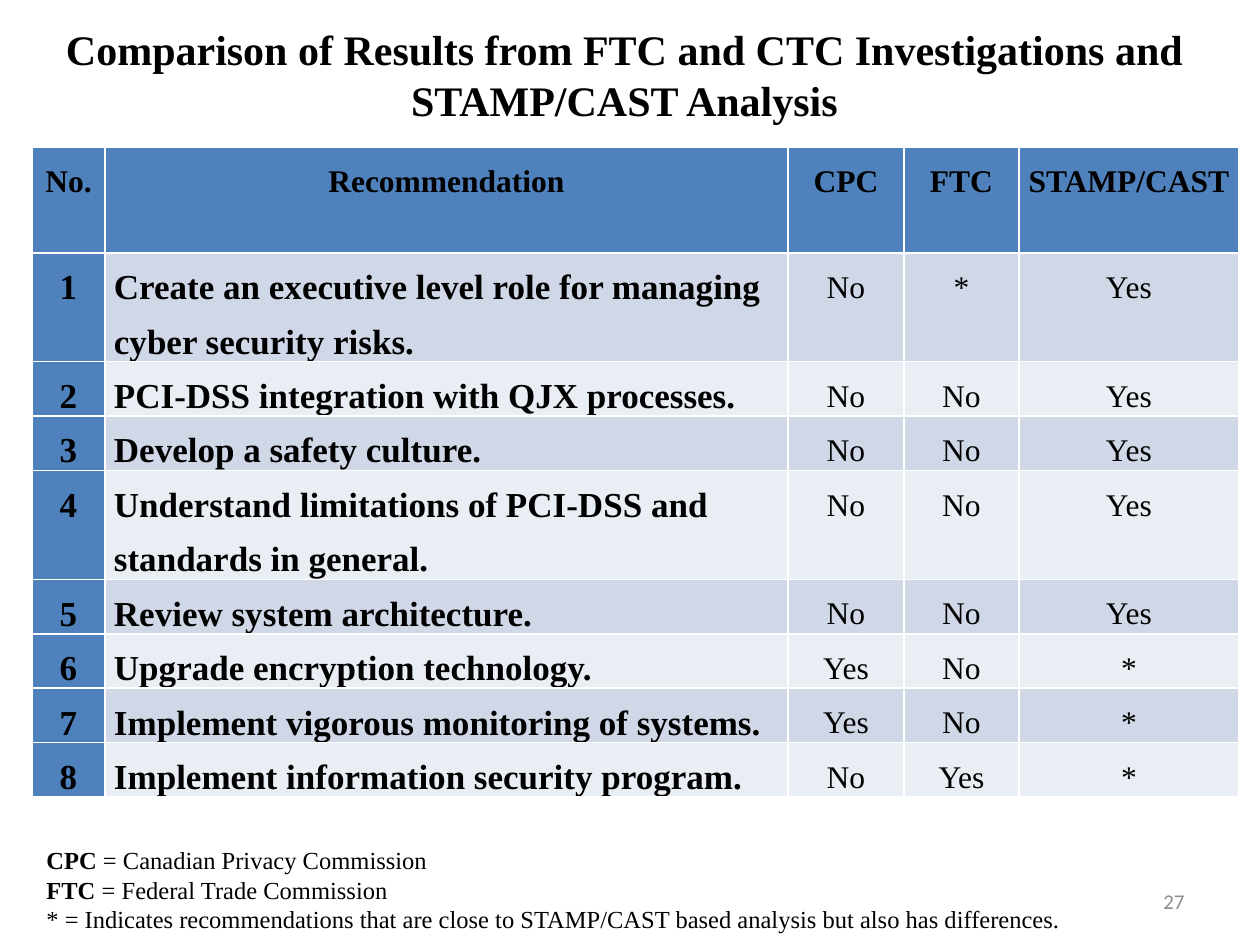
from pptx import Presentation
from pptx.dml.color import RGBColor
from pptx.enum.text import MSO_ANCHOR as Anchor, PP_ALIGN as Align
from pptx.util import Emu, Pt

BLACK = RGBColor(0x00, 0x00, 0x00)
GRAY = RGBColor(0x8C, 0x8C, 0x8C)
BLUE = RGBColor(0x4F, 0x81, 0xBD)
BAND_DARK = RGBColor(0xD0, 0xD8, 0xE8)
BAND_LIGHT = RGBColor(0xE9, 0xED, 0xF4)
SERIF = "Times New Roman"


def px(value):
    return Emu(round(value * 914400 / 126))


def write(paragraph, text, size=18, bold=False, color=BLACK, font=SERIF, align=Align.LEFT, spacing=None):
    paragraph.alignment = align
    paragraph.line_spacing = spacing
    run = paragraph.add_run()
    run.text = text
    run.font.size = Pt(size)
    run.font.bold = bold
    run.font.name = font
    run.font.color.rgb = color


presentation = Presentation()
presentation.slide_width = px(1260)
presentation.slide_height = px(945)
slide = presentation.slides.add_slide(presentation.slide_layouts[5])

title = slide.shapes.title
title.left, title.top, title.width, title.height = px(21), px(11), px(1207), px(126)
title.text_frame.vertical_anchor = Anchor.MIDDLE
write(title.text_frame.paragraphs[0],
      "Comparison of Results from FTC and CTC Investigations and STAMP/CAST Analysis",
      size=24, bold=True, align=Align.CENTER)

headers = ["No.", "Recommendation", "CPC", "FTC", "STAMP/CAST"]
recommendations = [
    ("Create an executive level role for managing cyber security risks.", "No", "*", "Yes"),
    ("PCI-DSS integration with QJX processes.", "No", "No", "Yes"),
    ("Develop a safety culture.", "No", "No", "Yes"),
    ("Understand limitations of PCI-DSS and standards in general.", "No", "No", "Yes"),
    ("Review system architecture.", "No", "No", "Yes"),
    ("Upgrade encryption technology.", "Yes", "No", "*"),
    ("Implement vigorous monitoring of systems.", "Yes", "No", "*"),
    ("Implement information security program.", "No", "Yes", "*"),
]
rows = [headers] + [(str(number), *entry) for number, entry in enumerate(recommendations, 1)]
column_widths = [73, 683, 116, 115, 220]
row_heights = [106, 108, 54, 54, 108, 54, 54, 54, 54]

table = slide.shapes.add_table(len(rows), len(headers), px(32), px(147),
                               px(sum(column_widths)), px(sum(row_heights))).table
table.first_col = True
for column, width in zip(table.columns, column_widths):
    column.width = px(width)
for row, height in zip(table.rows, row_heights):
    row.height = px(height)

for row_index, row in enumerate(rows):
    for column_index, text in enumerate(row):
        cell = table.cell(row_index, column_index)
        cell.margin_left = cell.margin_right = px(9)
        cell.margin_top = cell.margin_bottom = 0
        is_header = row_index == 0
        is_label = not is_header and column_index < 2
        cell.fill.solid()
        if is_header or column_index == 0:
            cell.fill.fore_color.rgb = BLUE
        else:
            cell.fill.fore_color.rgb = BAND_DARK if row_index % 2 else BAND_LIGHT
        write(cell.text_frame.paragraphs[0], text,
              size=20 if is_label else 18,
              bold=is_header or is_label,
              align=Align.LEFT if is_label and column_index == 1 else Align.CENTER,
              spacing=1.4 if is_label else 1.5)

page_number = slide.shapes.add_textbox(px(903), px(876), px(294), px(50)).text_frame
page_number.word_wrap = True
page_number.vertical_anchor = Anchor.MIDDLE
write(page_number.paragraphs[0], "27", size=12, color=GRAY, font="Calibri", align=Align.RIGHT)

legend = slide.shapes.add_textbox(px(34), px(839), px(1103), px(102)).text_frame
legend.word_wrap = True
legend_lines = [
    ("CPC", " = Canadian Privacy Commission"),
    ("FTC", " = Federal Trade Commission"),
    ("", "* = Indicates recommendations that are close to STAMP/CAST based analysis but also has differences."),
]
for index, (term, meaning) in enumerate(legend_lines):
    paragraph = legend.add_paragraph() if index else legend.paragraphs[0]
    if term:
        write(paragraph, term, size=14, bold=True)
    write(paragraph, meaning, size=14)

presentation.save("out.pptx")
